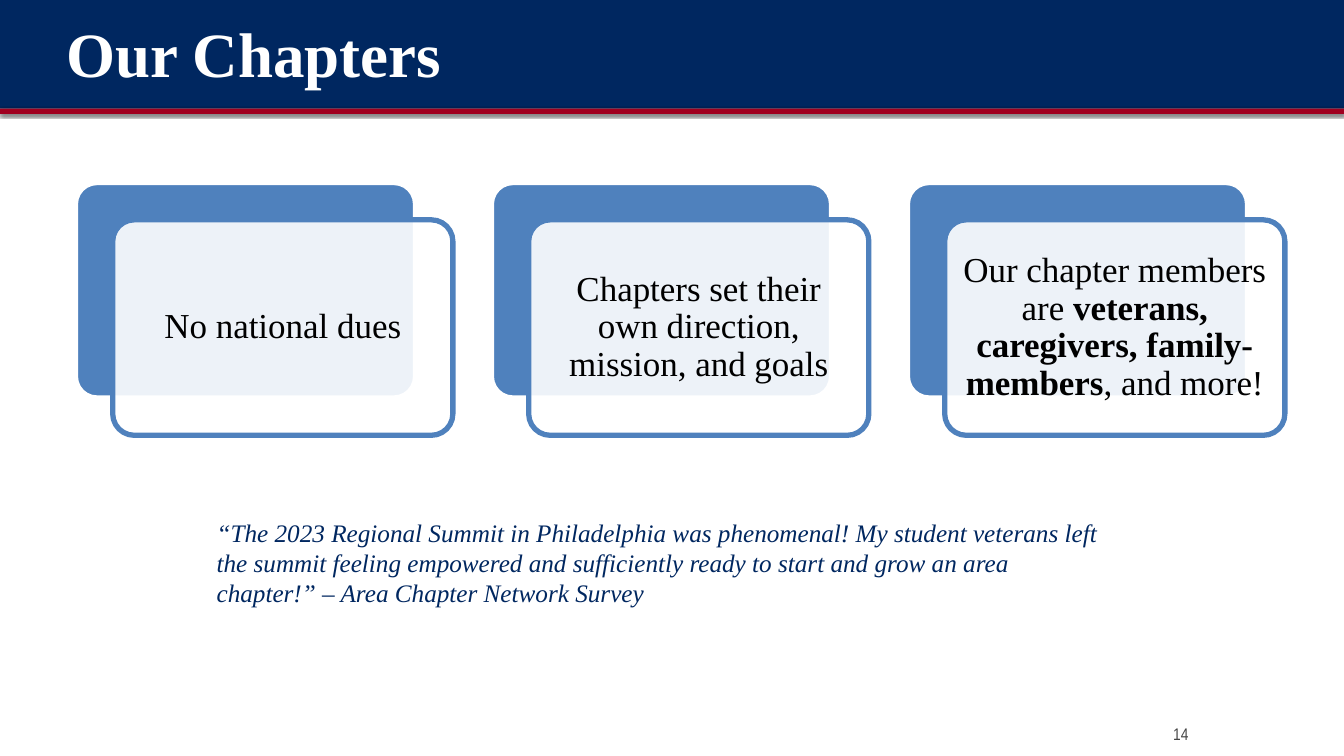
from lxml.etree import SubElement
from pptx import Presentation
from pptx.dml.color import RGBColor
from pptx.enum.shapes import MSO_SHAPE
from pptx.enum.text import MSO_ANCHOR, PP_ALIGN
from pptx.oxml.ns import qn
from pptx.util import Cm, Pt

NAVY, RED, BLUE, WHITE, BLACK = "002760", "A0001F", "4F81BD", "FFFFFF", "000000"
SERIF = "Times New Roman"
CARDS = [
    [("No national dues", False)],
    [("Chapters set their own direction, mission, and goals", False)],
    [("Our chapter members are ", False),
     ("veterans, caregivers, family-members", True),
     (", and more!", False)],
]


def paint(color, shade):
    color.rgb = RGBColor.from_string(shade)


def style(font, size, shade, name=SERIF, bold=False, italic=False):
    font.name, font.size, font.bold, font.italic = name, Pt(size), bold, italic
    paint(font.color, shade)


def inset(frame, left, top, right, bottom):
    frame.margin_left, frame.margin_top = Cm(left), Cm(top)
    frame.margin_right, frame.margin_bottom = Cm(right), Cm(bottom)


def add_block(slide, kind, box, fill, line=None):
    block = slide.shapes.add_shape(kind, *map(Cm, box))
    block.shadow.inherit = False
    block.fill.solid()
    paint(block.fill.fore_color, fill)
    if line:
        paint(block.line.color, line)
        block.line.width = Pt(3.78)
    else:
        block.line.fill.background()
    return block


def add_shadow(shape):
    effects = shape.element.spPr.find(qn("a:effectLst"))
    shadow = SubElement(effects, qn("a:outerShdw"), blurRad="31750",
                        dist="10160", dir="5400000", rotWithShape="0")
    color = SubElement(shadow, qn("a:srgbClr"), val=BLACK)
    SubElement(color, qn("a:alpha"), val="60000")


def add_header(slide, box, text):
    left, top, width, height = box
    add_block(slide, MSO_SHAPE.RECTANGLE, box, NAVY)
    rule = (left, top + height, width, 0.13)
    add_shadow(add_block(slide, MSO_SHAPE.RECTANGLE, rule, RED))

    title = slide.shapes.title
    title.element.getparent().append(title.element)  # bring in front of the band
    title.left, title.top = Cm(left + 1.42), Cm(top)
    title.width, title.height = Cm(30.48), Cm(height - 0.1)
    frame = title.text_frame
    frame.text = text
    frame.vertical_anchor = MSO_ANCHOR.MIDDLE
    inset(frame, 0.25, 0.13, 0.13, 0.13)
    line = frame.paragraphs[0]
    line.alignment = PP_ALIGN.LEFT
    style(line.runs[0].font, 45, WHITE, bold=True)


def add_card(slide, box, parts):
    """Draw a blue back plate and a see-through front plate holding the text."""
    left, top, width, height = box
    shift = 0.94
    size = (width - shift, height - shift)
    back = add_block(slide, MSO_SHAPE.ROUNDED_RECTANGLE,
                     (left, top, *size), BLUE, WHITE)
    front = add_block(slide, MSO_SHAPE.ROUNDED_RECTANGLE,
                      (left + shift, top + shift, *size), WHITE, BLUE)
    for plate in (back, front):
        plate.adjustments[0] = 0.1
    color = front.element.spPr.find(qn("a:solidFill"))[0]
    SubElement(color, qn("a:alpha"), val="90000")

    frame = front.text_frame
    frame.word_wrap = True
    frame.vertical_anchor = MSO_ANCHOR.MIDDLE
    inset(frame, 0.25, 0.25, 0.25, 0.25)
    line = frame.paragraphs[0]
    line.alignment = PP_ALIGN.CENTER
    line.line_spacing = 0.9
    for text, bold in parts:
        run = line.add_run()
        run.text = text
        style(run.font, 25, BLACK, bold=bold)


def add_cards(slide, box, cards):
    left, top, width, height = box
    gap = 0.97
    wide = (width - gap * (len(cards) - 1)) / len(cards)
    for i, parts in enumerate(cards):
        add_card(slide, (left + i * (wide + gap), top, wide, height), parts)


def add_text(slide, box, text):
    frame = slide.shapes.add_textbox(*map(Cm, box)).text_frame
    frame.word_wrap = True
    frame.text = text
    return frame


def add_quote(slide, box, text):
    frame = add_text(slide, box, text)
    style(frame.paragraphs[0].runs[0].font, 18, NAVY, italic=True)


def add_number(slide, box, text):
    frame = add_text(slide, box, text)
    frame.vertical_anchor = MSO_ANCHOR.BOTTOM
    inset(frame, 0.25, 0.13, 0.25, 0)
    line = frame.paragraphs[0]
    line.alignment = PP_ALIGN.RIGHT
    style(line.runs[0].font, 12, "454545", name="Arial Narrow")


def main():
    deck = Presentation()
    deck.slide_width, deck.slide_height = Cm(33.87), Cm(19.05)
    slide = deck.slides.add_slide(deck.slide_layouts[5])
    add_header(slide, (0, 0, 33.87, 2.74), "Our Chapters")
    add_cards(slide, (1.9, 4.6, 30.48, 6.37), CARDS)
    add_number(slide, (27.38, 17.98, 2.82, 0.76), "14")
    add_quote(slide, (5.21, 12.9, 22.86, 2.57),
              "“The 2023 Regional Summit in Philadelphia was phenomenal! "
              "My student veterans left the summit feeling empowered and "
              "sufficiently ready to start and grow an area chapter!” "
              "– Area Chapter Network Survey")
    deck.save("out.pptx")


if __name__ == "__main__":
    main()
